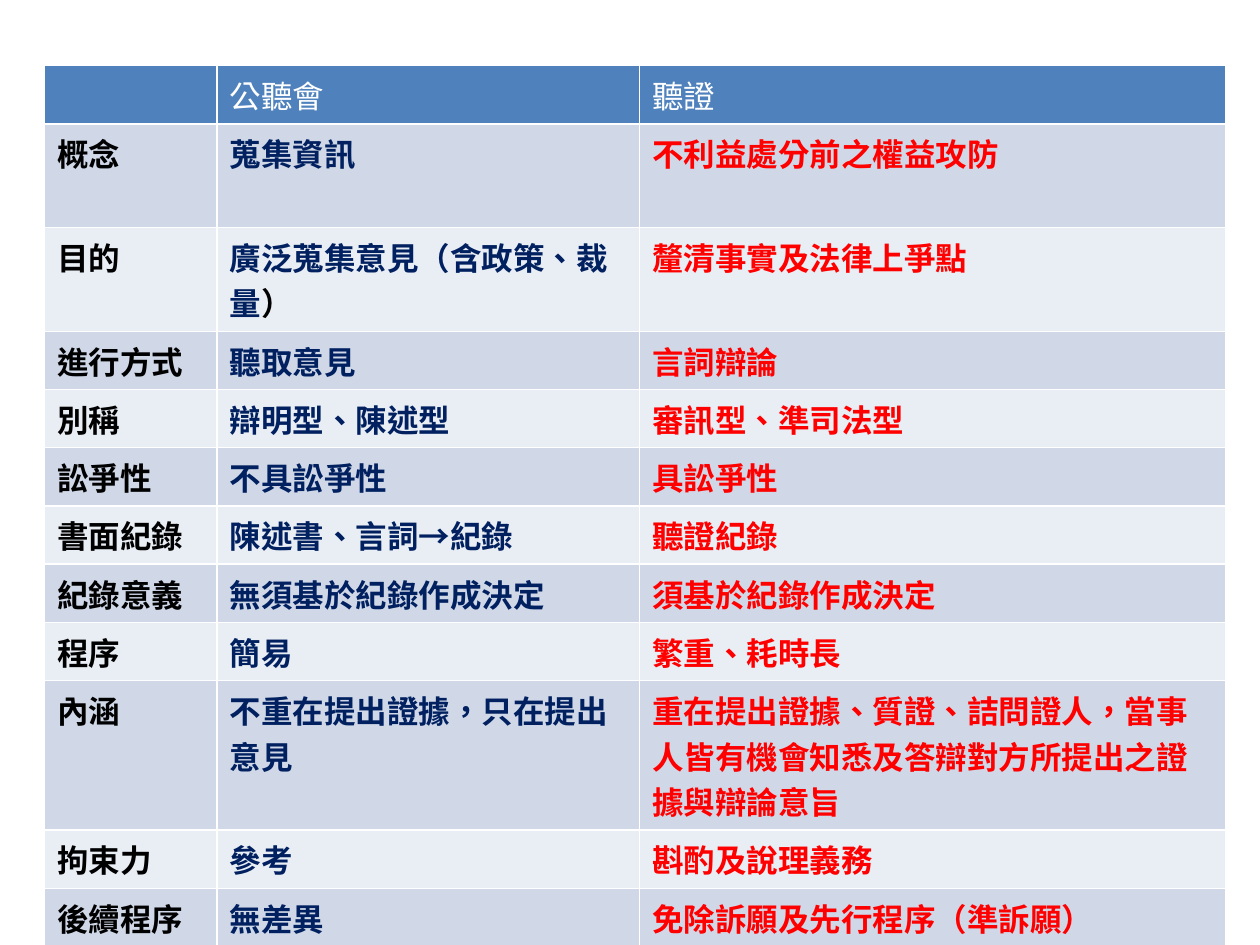
from pptx import Presentation
from pptx.dml.color import RGBColor
from pptx.enum.lang import MSO_LANGUAGE_ID
from pptx.util import Pt

HEADINGS = ("", "公聽會", "聽證")
COMPARISON = [
    ("概念", "蒐集資訊", "不利益處分前之權益攻防"),
    ("目的", "廣泛蒐集意見（含政策、裁量）", "釐清事實及法律上爭點"),
    ("進行方式", "聽取意見", "言詞辯論"),
    ("別稱", "辯明型、陳述型", "審訊型、準司法型"),
    ("訟爭性", "不具訟爭性", "具訟爭性"),
    ("書面紀錄", "陳述書、言詞→紀錄", "聽證紀錄"),
    ("紀錄意義", "無須基於紀錄作成決定", "須基於紀錄作成決定"),
    ("程序", "簡易", "繁重、耗時長"),
    ("內涵", "不重在提出證據，只在提出意見",
     "重在提出證據、質證、詰問證人，當事人皆有機會知悉及答辯對方所提出之證據與辯論意旨"),
    ("拘束力", "參考", "斟酌及說理義務"),
    ("後續程序", "無差異", "免除訴願及先行程序（準訴願）"),
]
BLACK_ENDING = "量）"  # the closing bracket here is black

LEFT, TOP = 25.5, 37.5
COLUMN_WIDTHS = (98.5, 241.5, 335)
HEADING_HEIGHT, ROW_HEIGHT, CONCEPT_HEIGHT = 24, 29.5, 59.2
HEADING_FILL, BAND_FILLS = "4F81BD", ("D0D8E8", "E9EDF4")
COLUMN_STYLES = (("Calibri", "000000"), ("Noto Sans CJK SC", "002060"),
                 ("Noto Sans CJK SC", "FF0000"))


def rgb(value):
    return RGBColor.from_string(value)


def fill_cell(cell, text, fill, typeface, color, bold):
    cell.fill.solid()
    cell.fill.fore_color.rgb = rgb(fill)
    paragraph = cell.text_frame.paragraphs[0]
    paragraph.font.size = Pt(18)
    paragraph.font.name = typeface
    paragraph.font.bold = bold
    paragraph.font.color.rgb = rgb(color)
    parts = [text[:-1], text[-1]] if text.endswith(BLACK_ENDING) else [text]
    for part in filter(None, parts):
        run = paragraph.add_run()
        run.text = part
        run.font.language_id = MSO_LANGUAGE_ID.TRADITIONAL_CHINESE
    if len(parts) > 1:
        run.font.color.rgb = rgb("000000")


presentation = Presentation()
presentation.slide_width, presentation.slide_height = Pt(720), Pt(540)
slide = presentation.slides.add_slide(presentation.slide_layouts[6])

# Comparison table
row_heights = [HEADING_HEIGHT, CONCEPT_HEIGHT] + [ROW_HEIGHT] * (len(COMPARISON) - 1)
comparison = slide.shapes.add_table(
    len(row_heights), len(COLUMN_WIDTHS), Pt(LEFT), Pt(TOP),
    Pt(sum(COLUMN_WIDTHS)), Pt(sum(row_heights))).table
for column, width in zip(comparison.columns, COLUMN_WIDTHS):
    column.width = Pt(width)
for row, height in zip(comparison.rows, row_heights):
    row.height = Pt(height)

# Heading row
for index, heading in enumerate(HEADINGS):
    fill_cell(comparison.cell(0, index), heading, HEADING_FILL, "Calibri", "FFFFFF", False)

# Banded rows
for row_index, entries in enumerate(COMPARISON):
    band = BAND_FILLS[row_index % 2]
    for index, (entry, style) in enumerate(zip(entries, COLUMN_STYLES)):
        fill_cell(comparison.cell(row_index + 1, index), entry, band, *style, True)

presentation.save("out.pptx")
